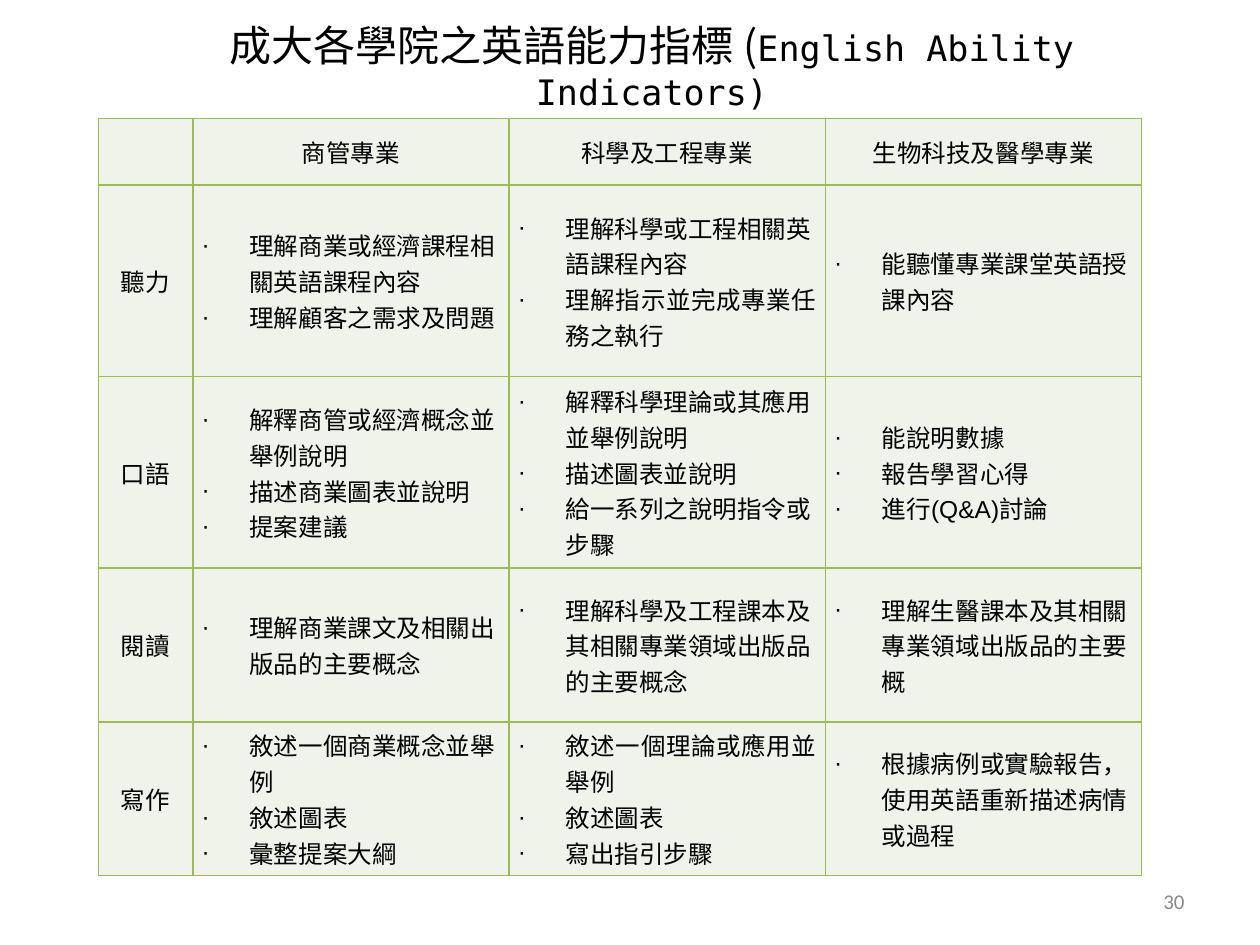
import pptx
import pptx.util
import pptx.dml.color
import pptx.enum.text
import pptx.oxml.ns
from lxml import etree
from pptx.util import Inches, Pt

COLORS = {"text": "000000", "number": "898989", "cell": "EFF3EA", "border": "9BBB59"}
ALIGN = pptx.enum.text.PP_ALIGN
MIDDLE = pptx.enum.text.MSO_ANCHOR.MIDDLE
CJK_FONT = "Noto Sans CJK SC"
COLUMN_WIDTHS = [0.75, 2.51, 2.51, 2.51]
ROW_HEIGHTS = [0.53, 1.52, 1.52, 1.22, 1.22]

HEADINGS = ["", "商管專業", "科學及工程專業", "生物科技及醫學專業"]
SKILLS = [
    ("聽力",
     ["理解商業或經濟課程相關英語課程內容", "理解顧客之需求及問題"],
     ["理解科學或工程相關英語課程內容", "理解指示並完成專業任務之執行"],
     ["能聽懂專業課堂英語授課內容"]),
    ("口語",
     ["解釋商管或經濟概念並舉例說明", "描述商業圖表並說明", "提案建議"],
     ["解釋科學理論或其應用並舉例說明", "描述圖表並說明", "給一系列之說明指令或步驟"],
     ["能說明數據", "報告學習心得", "進行(Q&A)討論"]),
    ("閱讀",
     ["理解商業課文及相關出版品的主要概念"],
     ["理解科學及工程課本及其相關專業領域出版品的主要概念"],
     ["理解生醫課本及其相關專業領域出版品的主要概"]),
    ("寫作",
     ["敘述一個商業概念並舉例", "敘述圖表", "彙整提案大綱"],
     ["敘述一個理論或應用並舉例", "敘述圖表", "寫出指引步驟"],
     ["根據病例或實驗報告，使用英語重新描述病情或過程"]),
]
JUSTIFIED = {"理解指示並完成專業任務之執行", *SKILLS[3][2]}


def add_element(parent, tag, **attributes):
    return etree.SubElement(parent, pptx.oxml.ns.qn(tag), attributes)


def rgb(name):
    return pptx.dml.color.RGBColor.from_string(COLORS[name])


def style_run(span, size, font, color="text"):
    span.font.size = Pt(size)
    span.font.name = font
    span.font.bold = False
    span.font.color.rgb = rgb(color)
    add_element(span.font._element, "a:ea", typeface=CJK_FONT)


def add_title(page, left, top, width, height):
    title = page.shapes.title
    title.left, title.top, title.width, title.height = map(Inches, (left, top, width, height))
    frame = title.text_frame
    frame.word_wrap = True
    frame.auto_size = pptx.enum.text.MSO_AUTO_SIZE.NONE
    frame.vertical_anchor = MIDDLE
    # The bottom inset lifts the two lines clear of the table
    frame.margin_top, frame.margin_bottom = 0, Inches(0.3)
    para = frame.paragraphs[0]
    para.alignment = ALIGN.CENTER
    para.space_before = Pt(0)
    for text, size, font in [("成大各學院之英語能力指標 (", 24, CJK_FONT),
                             ("English Ability Indicators)", 20, "DejaVu Sans Mono")]:
        span = para.add_run()
        span.text = text
        style_run(span, size, font)


def add_bullet(para):
    properties = para._p.get_or_add_pPr()
    properties.set("marL", str(Inches(0.38)))
    properties.set("indent", str(-Inches(0.38)))
    add_element(properties, "a:buFont", typeface="Arial")
    add_element(properties, "a:buChar", char="·")


def add_borders(cell):
    properties = cell._tc.get_or_add_tcPr()
    for index, side in enumerate(("a:lnL", "a:lnR", "a:lnT", "a:lnB")):
        line = etree.Element(pptx.oxml.ns.qn(side), {"w": str(Pt(1))})
        fill = add_element(line, "a:solidFill")
        add_element(fill, "a:srgbClr", val=COLORS["border"])
        properties.insert(index, line)


def fill_cell(cell, content):
    cell.fill.solid()
    cell.fill.fore_color.rgb = rgb("cell")
    add_borders(cell)
    cell.vertical_anchor = MIDDLE
    cell.margin_left = cell.margin_right = Inches(0.07)
    cell.margin_top = cell.margin_bottom = 0
    bulleted = isinstance(content, list)
    cell.text_frame.text = "\n".join(content) if bulleted else content
    for para in cell.text_frame.paragraphs:
        if bulleted:
            add_bullet(para)
            para.alignment = ALIGN.JUSTIFY if para.text in JUSTIFIED else ALIGN.LEFT
        else:
            para.alignment = ALIGN.CENTER
        for span in para.runs:
            style_run(span, 14, "Arial")


def add_indicator_table(page, left, top):
    rows = [HEADINGS, *SKILLS]
    table = page.shapes.add_table(
        len(rows), len(HEADINGS), Inches(left), Inches(top),
        Inches(sum(COLUMN_WIDTHS)), Inches(sum(ROW_HEIGHTS))).table
    table.first_row = table.horz_banding = False
    for column, width in zip(table.columns, COLUMN_WIDTHS):
        column.width = Inches(width)
    for row, height, contents in zip(table.rows, ROW_HEIGHTS, rows):
        row.height = Inches(height)
        for cell, content in zip(row.cells, contents):
            fill_cell(cell, content)


def add_page_number(page, left, top, width, height):
    box = page.shapes.add_textbox(*map(Inches, (left, top, width, height)))
    frame = box.text_frame
    frame.word_wrap = True
    frame.vertical_anchor = MIDDLE
    frame.text = "30"
    frame.paragraphs[0].alignment = ALIGN.RIGHT
    style_run(frame.paragraphs[0].runs[0], 12, "Calibri", "number")


def main():
    deck = pptx.Presentation()
    deck.slide_width, deck.slide_height = Inches(10), Inches(7.5)
    page = deck.slides.add_slide(deck.slide_layouts[5])
    add_page_number(page, 7.17, 6.95, 2.33, 0.4)
    add_indicator_table(page, 0.78, 0.94)
    add_title(page, 1.32, 0.27, 7.71, 0.81)
    deck.save("out.pptx")


if __name__ == "__main__":
    main()
